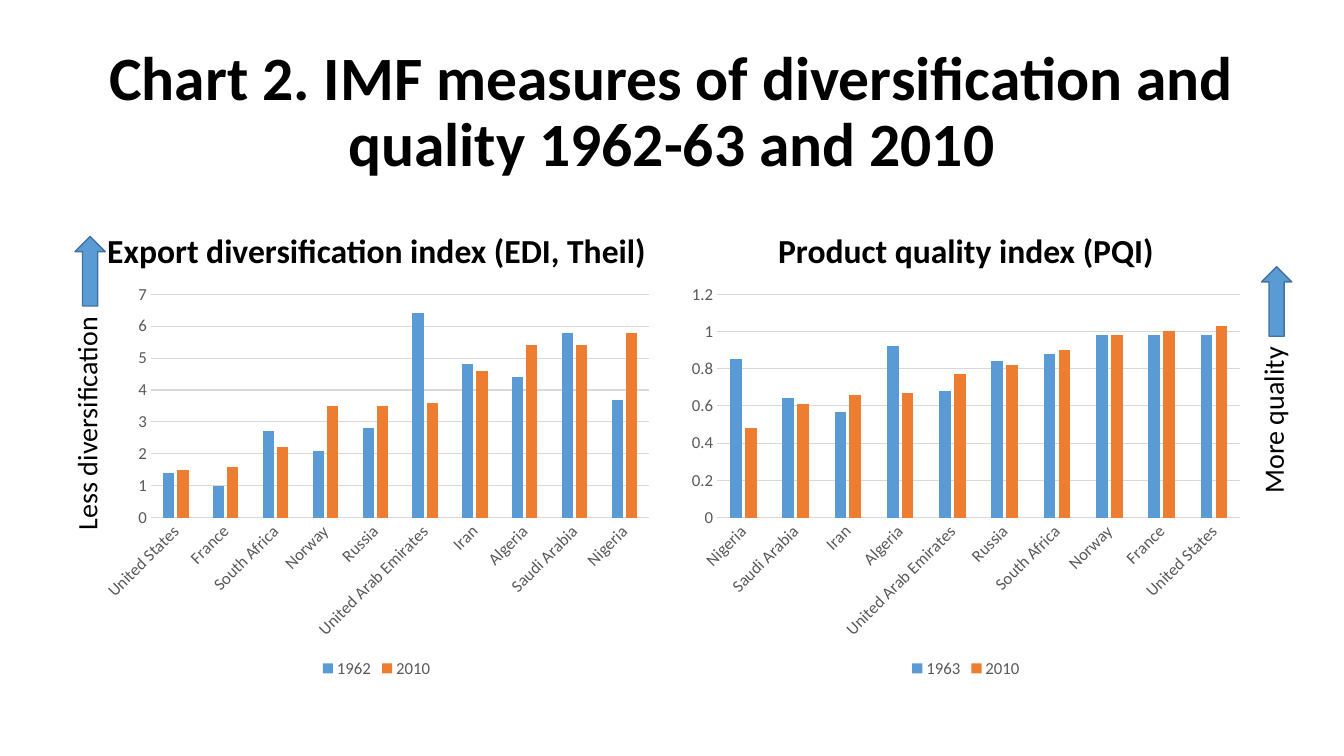
import pptx
import pptx.chart.data
import pptx.dml.color
import pptx.enum.chart
import pptx.enum.shapes
import pptx.enum.text
import pptx.util

Pt = pptx.util.Pt
RGB = pptx.dml.color.RGBColor
BLACK = RGB(0x00, 0x00, 0x00)
GREY = RGB(0x59, 0x59, 0x59)
PALE = RGB(0xD9, 0xD9, 0xD9)
BLUE = RGB(0x5B, 0x9B, 0xD5)
NAVY = RGB(0x43, 0x73, 0x9E)
RUST = RGB(0xED, 0x7D, 0x31)

FACE = "Calibri"
TITLE = {"name": FACE, "size": Pt(44), "bold": True}
HEAD = {"name": FACE, "size": Pt(24), "bold": True}
SIDE = {"name": FACE, "size": Pt(20), "bold": False}
TICK = {"name": FACE, "size": Pt(12), "bold": False}

EDI = {
    "cats": ["United States", "France", "South Africa", "Norway", "Russia",
             "United Arab Emirates", "Iran", "Algeria", "Saudi Arabia", "Nigeria"],
    "rows": {"1962": [1.4, 1, 2.7, 2.1, 2.8, 6.4, 4.8, 4.4, 5.8, 3.7],
             "2010": [1.5, 1.6, 2.2, 3.5, 3.5, 3.6, 4.6, 5.4, 5.4, 5.8]},
    "top": 7, "step": 1,
}
PQI = {
    "cats": ["Nigeria", "Saudi Arabia", "Iran", "Algeria", "United Arab Emirates",
             "Russia", "South Africa", "Norway", "France", "United States"],
    "rows": {"1963": [0.85, 0.64, 0.57, 0.92, 0.68, 0.84, 0.88, 0.98, 0.98, 0.98],
             "2010": [0.48, 0.61, 0.66, 0.67, 0.77, 0.82, 0.9, 0.98, 1, 1.03]},
    "top": 1.2, "step": 0.2,
}


def style(item, form):
    for key, val in form.items():
        setattr(item, key, val)


def ink(font, form, tone):
    style(font, form)
    font.color.rgb = tone


def place(item, x, y, w, h):
    style(item, {"left": Pt(x), "top": Pt(y), "width": Pt(w), "height": Pt(h)})


def head(item, box, text, form, anchor, gap):
    """Fill a title or body placeholder."""
    place(item, *box)
    frame = item.text_frame
    frame.text = text
    style(frame, {"word_wrap": True, "vertical_anchor": anchor,
                  "auto_size": pptx.enum.text.MSO_AUTO_SIZE.NONE})
    para = frame.paragraphs[0]
    style(para, {"alignment": pptx.enum.text.PP_ALIGN.CENTER,
                 "line_spacing": 0.9, "space_before": Pt(gap)})
    ink(para.runs[0].font, form, BLACK)


def plot(slide, box, info):
    """Draw one clustered column chart."""
    data = pptx.chart.data.CategoryChartData()
    data.categories = info["cats"]
    for name, vals in info["rows"].items():
        data.add_series(name, vals)
    kind = pptx.enum.chart.XL_CHART_TYPE.COLUMN_CLUSTERED
    chart = slide.shapes.add_chart(kind, *map(Pt, box), data).chart
    style(chart, {"has_title": False, "has_legend": True})
    ink(chart.font, {"name": FACE, "size": Pt(10)}, BLACK)

    # Legend
    style(chart.legend, {"position": pptx.enum.chart.XL_LEGEND_POSITION.BOTTOM,
                         "include_in_layout": False})
    ink(chart.legend.font, TICK, GREY)

    # Columns
    bars = chart.plots[0]
    style(bars, {"gap_width": 219, "overlap": -27, "vary_by_categories": False})
    for row, tone in zip(bars.series, (BLUE, RUST)):
        row.format.fill.solid()
        row.format.fill.fore_color.rgb = tone

    # Axes
    cat, val = chart.category_axis, chart.value_axis
    for axis in (cat, val):
        style(axis, {"major_tick_mark": pptx.enum.chart.XL_TICK_MARK.NONE,
                     "minor_tick_mark": pptx.enum.chart.XL_TICK_MARK.NONE})
        ink(axis.tick_labels.font, TICK, GREY)
    style(val, {"minimum_scale": 0, "maximum_scale": info["top"],
                "major_unit": info["step"], "has_major_gridlines": True})
    style(val.tick_labels, {"number_format": "General",
                            "number_format_is_linked": False})
    val.format.line.fill.background()
    for line in (cat.format.line, val.major_gridlines.format.line):
        line.width = Pt(0.75)
        line.color.rgb = PALE
    for body in chart.element.xpath(".//c:catAx/c:txPr/a:bodyPr"):
        body.set("rot", "-2700000")


def panel(slide, item, box, text, info):
    """Set a heading above its chart."""
    x, y, w, h = box
    top = 64.8
    head(item, (x, y, w, top), text, HEAD,
         pptx.enum.text.MSO_ANCHOR.BOTTOM, 10)
    plot(slide, (x, y + top, w, h - top), info)


def side(slide, box, text, span):
    """Stack an up arrow over an upright label; both are turned boxes."""
    x, y, w, h = box
    mid = x + w / 2

    # Label at the foot of the box
    deep = 31.7
    note = slide.shapes.add_textbox(
        Pt(mid - 2.5 - span / 2), Pt(y + h - span / 2 - deep / 2), Pt(span), Pt(deep))
    note.rotation = 270
    frame = note.text_frame
    frame.text = text
    style(frame, {"word_wrap": False,
                  "auto_size": pptx.enum.text.MSO_AUTO_SIZE.SHAPE_TO_FIT_TEXT})
    ink(frame.paragraphs[0].runs[0].font, SIDE, BLACK)

    # Arrow at the head of the box
    long = 49.7
    arrow = slide.shapes.add_shape(
        pptx.enum.shapes.MSO_SHAPE.RIGHT_ARROW, Pt(mid - long / 2),
        Pt(y + long / 2 - w / 2), Pt(long), Pt(w))
    arrow.rotation = 270
    arrow.shadow.inherit = False
    arrow.fill.solid()
    arrow.fill.fore_color.rgb = BLUE
    arrow.line.color.rgb = NAVY
    arrow.line.width = Pt(1)


def main():
    deck = pptx.Presentation()
    style(deck, {"slide_width": Pt(960), "slide_height": Pt(540)})
    slide = deck.slides.add_slide(deck.slide_layouts.get_by_name("Comparison"))
    slots = {item.placeholder_format.idx: item for item in slide.placeholders}
    for key in (2, 4):
        item = slots[key].element
        item.getparent().remove(item)

    # Title
    head(slots[0], (66, 28.8, 828, 104.4),
         "Chart 2. IMF measures of diversification and quality 1962-63 and 2010",
         TITLE, pptx.enum.text.MSO_ANCHOR.MIDDLE, 0)

    # Charts
    panel(slide, slots[1], (66, 132.5, 406, 355),
          "Export diversification index (EDI, Theil)", EDI)
    panel(slide, slots[3], (486, 132.5, 408, 355),
          "Product quality index (PQI)", PQI)

    # Reading guides
    side(slide, (53.6, 168.9, 21.6, 216.8), "Less diversification", 173.5)
    side(slide, (901.1, 190.5, 21.6, 169.1), "More quality", 120.2)
    deck.save("out.pptx")


if __name__ == "__main__":
    main()
